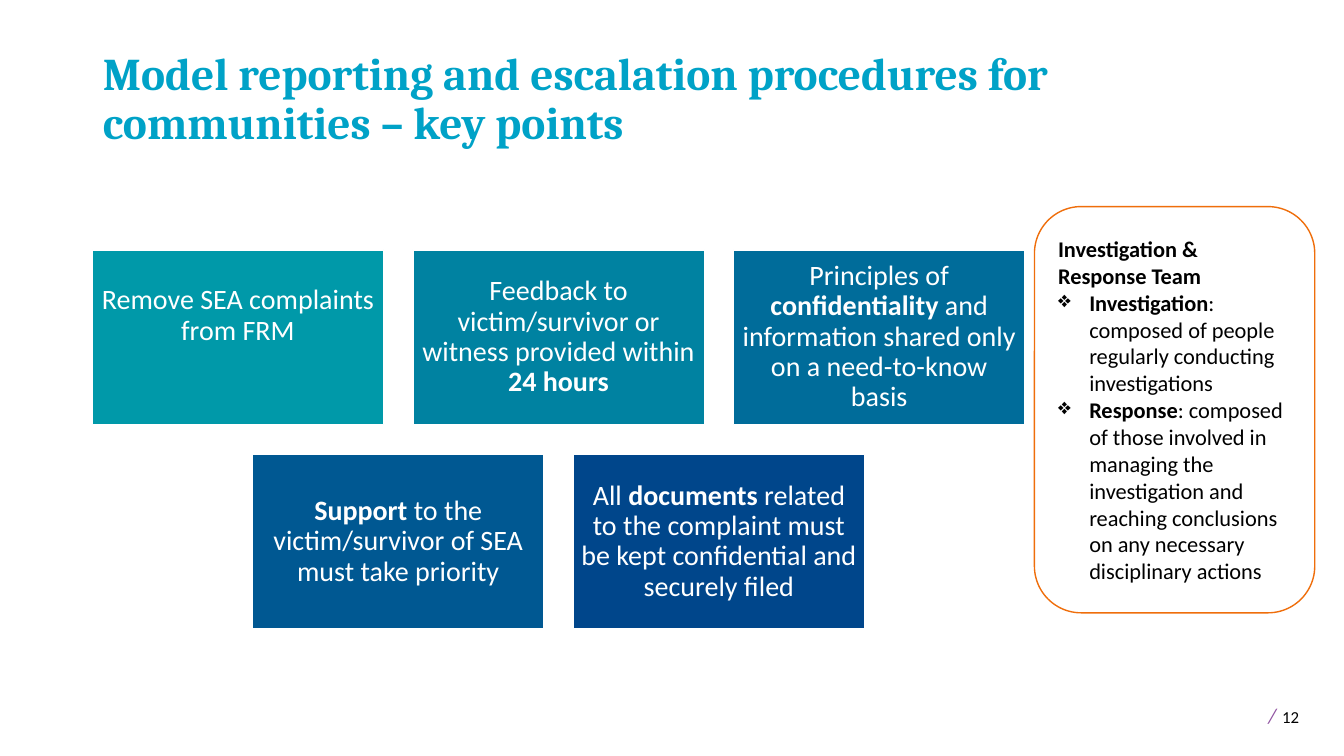
from lxml.etree import SubElement
from pptx import Presentation
from pptx.dml.color import RGBColor
from pptx.enum.shapes import MSO_SHAPE
from pptx.enum.text import MSO_ANCHOR, PP_ALIGN
from pptx.oxml.ns import qn
from pptx.util import Inches, Pt

COLORS = {
    "title": "00A2C7",
    "white": "FFFFFF",
    "black": "000000",
    "team_border": "EF6E0B",
    "slash": "9053A1",
}
TITLE = "Model reporting and escalation procedures for communities – key points"
# Text between double asterisks is bold.
KEY_POINT_ROWS = [
    [
        ("Remove SEA complaints from FRM", "0099A9"),
        ("Feedback to victim/survivor or witness provided within **24 hours**", "0082A1"),
        ("Principles of **confidentiality** and information shared only "
         "on a need-to-know basis", "006C9A"),
    ],
    [
        ("**Support** to the victim/survivor of SEA must take priority", "005892"),
        ("All **documents** related to the complaint must be kept confidential "
         "and securely filed", "00468B"),
    ],
]
TEAM_HEADING = "**Investigation & Response Team**"
TEAM_ROLES = [
    "**Investigation**: composed of people regularly conducting investigations",
    "**Response**: composed of those involved in managing the investigation and "
    "reaching conclusions on any necessary disciplinary actions",
]
PAGE_NUMBER = "12"

CARD_WIDTH, CARD_HEIGHT, CARD_GAP = 2.89, 1.73, 0.29
ROWS_CENTER, ROWS_TOP, ROW_STEP = 5.54, 2.48, 2.03
CARD_INSET = 0.08
FIRST_CARD_BOTTOM_INSET = 0.5
BULLET_INDENT = 0.31


def rgb(hex_code):
    return RGBColor.from_string(hex_code)


def set_font(font, size, color, name="Calibri"):
    font.name, font.size = name, Pt(size)
    font.color.rgb = rgb(color)


def write_marked(paragraph, text, size, color):
    """Fill a paragraph, making the parts between ** bold."""
    set_font(paragraph.font, size, color)
    for index, part in enumerate(text.split("**")):
        if part:
            run = paragraph.add_run()
            run.text = part
            if index % 2:
                run.font.bold = True


def add_panel(slide, kind, box, fill, border):
    panel = slide.shapes.add_shape(kind, *map(Inches, box))
    panel.shadow.inherit = False
    panel.fill.solid()
    panel.fill.fore_color.rgb = rgb(fill)
    panel.line.color.rgb = rgb(border)
    panel.line.width = Pt(1)
    panel.text_frame.word_wrap = True
    panel.text_frame.vertical_anchor = MSO_ANCHOR.MIDDLE
    return panel


def add_bullet(paragraph):
    properties = paragraph._p.get_or_add_pPr()
    properties.set("marL", str(Inches(BULLET_INDENT)))
    properties.set("indent", str(-Inches(BULLET_INDENT)))
    SubElement(properties, qn("a:buChar")).set("char", "❖")


def add_title(slide):
    title = slide.shapes.title
    title.left, title.top, title.width, title.height = map(Inches, (0.92, 0.4, 11.5, 1.13))
    frame = title.text_frame
    frame.text = TITLE
    frame.word_wrap = True
    frame.vertical_anchor = MSO_ANCHOR.BOTTOM
    heading = frame.paragraphs[0]
    heading.alignment = PP_ALIGN.LEFT
    heading.line_spacing = 0.9
    set_font(heading.font, 32.4, COLORS["title"], "Cambria")
    heading.font.bold = True


def add_key_points(slide):
    for row, points in enumerate(KEY_POINT_ROWS):
        row_width = len(points) * (CARD_WIDTH + CARD_GAP) - CARD_GAP
        row_left = ROWS_CENTER - row_width / 2
        for column, (point, fill) in enumerate(points):
            left = row_left + column * (CARD_WIDTH + CARD_GAP)
            box = (left, ROWS_TOP + row * ROW_STEP, CARD_WIDTH, CARD_HEIGHT)
            card = add_panel(slide, MSO_SHAPE.RECTANGLE, box, fill, COLORS["white"])
            frame = card.text_frame
            frame.margin_left = frame.margin_right = Inches(CARD_INSET)
            frame.margin_top = frame.margin_bottom = Inches(CARD_INSET)
            if row == column == 0:
                frame.margin_bottom = Inches(FIRST_CARD_BOTTOM_INSET)
            paragraph = frame.paragraphs[0]
            paragraph.alignment = PP_ALIGN.CENTER
            paragraph.line_spacing = 0.9
            write_marked(paragraph, point, 20, COLORS["white"])


def add_team(slide):
    team = add_panel(slide, MSO_SHAPE.ROUNDED_RECTANGLE, (10.26, 2.05, 2.78, 4.03),
                     COLORS["white"], COLORS["team_border"])
    heading = team.text_frame.paragraphs[0]
    heading.alignment = PP_ALIGN.LEFT
    write_marked(heading, TEAM_HEADING, 16, COLORS["black"])
    for role in TEAM_ROLES:
        paragraph = team.text_frame.add_paragraph()
        paragraph.alignment = PP_ALIGN.LEFT
        add_bullet(paragraph)
        write_marked(paragraph, role, 16, COLORS["black"])


def add_page_number(slide):
    footer = slide.shapes.add_textbox(*map(Inches, (12.43, 6.88, 0.87, 0.4)))
    footer.text_frame.word_wrap = True
    footer.text_frame.margin_left = Inches(0.15)
    paragraph = footer.text_frame.paragraphs[0]
    for text, size, color in (("/", 15, "slash"), (" ", 18, "black"),
                              (PAGE_NUMBER, 12, "black")):
        run = paragraph.add_run()
        run.text = text
        set_font(run.font, size, COLORS[color])
        run.font.italic = text == "/"


def main():
    deck = Presentation()
    deck.slide_width, deck.slide_height = Inches(13.33), Inches(7.5)
    slide = deck.slides.add_slide(deck.slide_layouts[5])
    add_page_number(slide)
    add_key_points(slide)
    add_title(slide)
    add_team(slide)
    deck.save("out.pptx")


if __name__ == "__main__":
    main()
